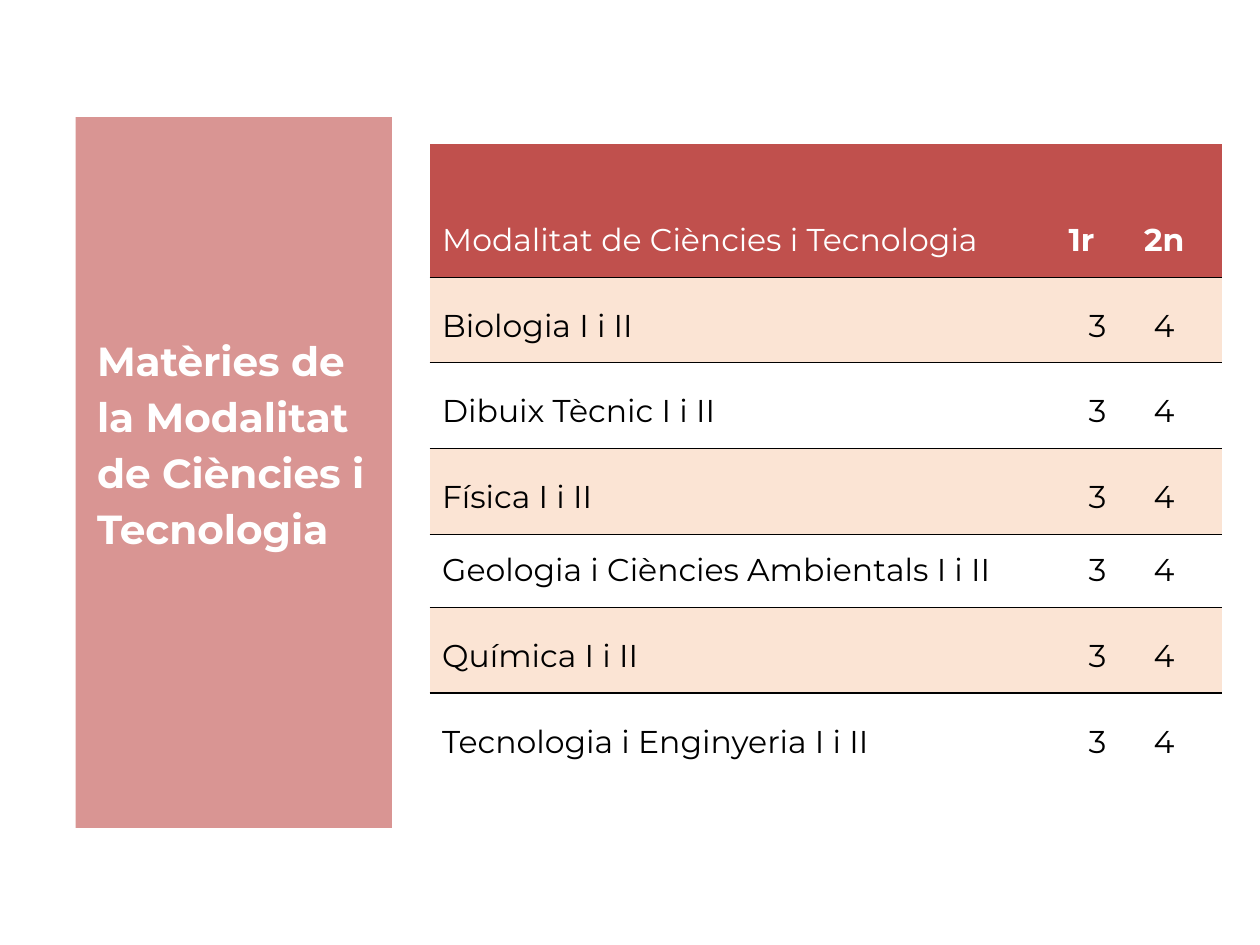
from lxml import etree
from pptx import Presentation
from pptx.dml.color import RGBColor
from pptx.enum.text import MSO_ANCHOR, PP_ALIGN
from pptx.oxml.ns import qn
from pptx.util import Inches, Pt

LEFT, CENTER, RIGHT = PP_ALIGN.LEFT, PP_ALIGN.CENTER, PP_ALIGN.RIGHT
TOP, BOTTOM = MSO_ANCHOR.TOP, MSO_ANCHOR.BOTTOM

FONT = "Montserrat"
WHITE = RGBColor(0xFF, 0xFF, 0xFF)
BLACK = RGBColor(0x00, 0x00, 0x00)
PINK = RGBColor(0xD9, 0x95, 0x93)
RED = RGBColor(0xC0, 0x50, 0x4D)
PEACH = RGBColor(0xFB, 0xE4, 0xD4)
NO_STYLE_NO_GRID = "{2D5ABB26-0587-4C30-8999-92F81FD0307C}"

SUBJECTS = [
    "Biologia I i II",
    "Dibuix Tècnic I i II",
    "Física I i II",
    "Geologia i Ciències Ambientals I i II",
    "Química I i II",
    "Tecnologia i Enginyeria I i II",
]
ROWS = [("Modalitat de Ciències i Tecnologia", "1r", "2n")]
ROWS += [(subject, "3", "4") for subject in SUBJECTS]
COLUMN_WIDTHS = [4.72, 0.75, 0.82]
ROW_HEIGHTS = [1.06, 0.68, 0.68, 0.68, 0.58, 0.68, 0.68]


def add_border(cell, side):
    """Draw a thin black line on one side of a cell: "lnT" or "lnB"."""
    line = etree.Element(qn("a:" + side), w=str(Pt(0.75)))
    fill = etree.SubElement(line, qn("a:solidFill"))
    etree.SubElement(fill, qn("a:srgbClr"), val=str(BLACK))
    # Borders come before the fill in the cell properties
    cell._tc.get_or_add_tcPr().insert(0, line)


presentation = Presentation()
presentation.slide_width = Inches(10)
presentation.slide_height = Inches(7.5)
slide = presentation.slides.add_slide(presentation.slide_layouts[5])

# Title panel
title = slide.shapes.title
title.left, title.top = Inches(0.6), Inches(0.93)
title.width, title.height = Inches(2.51), Inches(5.64)
title.fill.solid()
title.fill.fore_color.rgb = PINK
frame = title.text_frame
frame.text = "Matèries de la Modalitat de Ciències i Tecnologia"
frame.word_wrap = True
frame.vertical_anchor = TOP
frame.margin_left, frame.margin_right = Inches(0.17), Inches(0.07)
frame.margin_top, frame.margin_bottom = Inches(1.68), Inches(0.04)
paragraph = frame.paragraphs[0]
paragraph.alignment = LEFT
paragraph.line_spacing = 1.15
paragraph.font.name = FONT
paragraph.font.size = Pt(23.2)
paragraph.font.bold = True
paragraph.font.color.rgb = WHITE

# Subject table
table_frame = slide.shapes.add_table(
    len(ROWS), len(COLUMN_WIDTHS), Inches(3.41), Inches(1.14),
    Inches(sum(COLUMN_WIDTHS)), Inches(sum(ROW_HEIGHTS)))
table = table_frame.table
table.first_row = False
table.horz_banding = False
table._tbl.tblPr.find(qn("a:tableStyleId")).text = NO_STYLE_NO_GRID
for column, width in zip(table.columns, COLUMN_WIDTHS):
    column.width = Inches(width)
for row, height in zip(table.rows, ROW_HEIGHTS):
    row.height = Inches(height)

for row_index, values in enumerate(ROWS):
    is_header = row_index == 0
    is_shaded = row_index % 2 == 1
    for column_index, value in enumerate(values):
        cell = table.cell(row_index, column_index)
        cell.text = value
        cell.vertical_anchor = BOTTOM
        cell.margin_left = Inches(0.1 if column_index == 0 else 0)
        cell.margin_right = Inches(0.1)
        cell.margin_top, cell.margin_bottom = Inches(0.04), Inches(0.14)
        paragraph = cell.text_frame.paragraphs[0]
        paragraph.alignment = (LEFT, RIGHT, CENTER)[column_index]
        if is_header and column_index == 1:
            paragraph.alignment = CENTER
            cell.margin_left = Inches(0.26)
        paragraph.font.name = FONT
        paragraph.font.size = Pt(18)
        paragraph.font.bold = is_header and column_index > 0
        paragraph.font.color.rgb = WHITE if is_header else BLACK

        if is_header or is_shaded:
            cell.fill.solid()
            cell.fill.fore_color.rgb = RED if is_header else PEACH
        else:
            cell.fill.background()
        if is_shaded:
            add_border(cell, "lnT")
        elif row_index < len(ROWS) - 1:
            add_border(cell, "lnB")

presentation.save("out.pptx")
